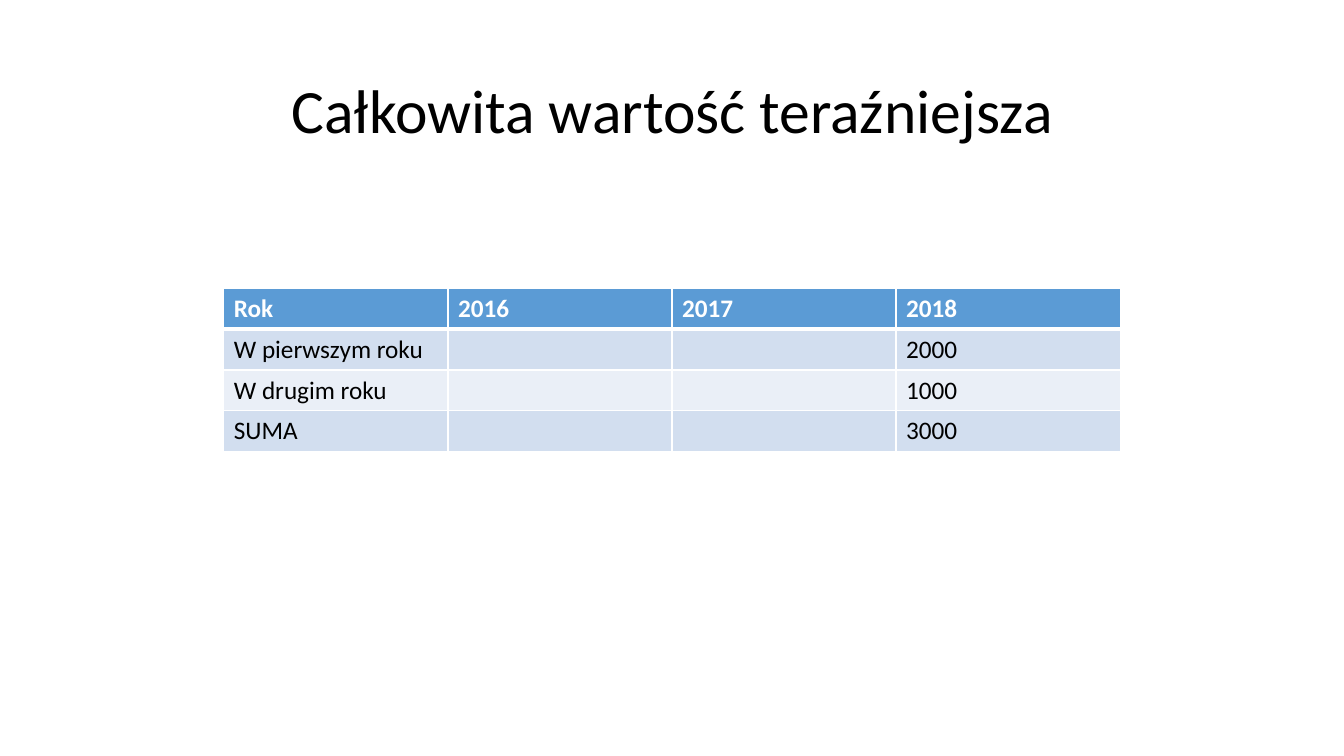
from lxml.etree import SubElement
from pptx import Presentation
from pptx.dml.color import RGBColor
from pptx.enum.text import MSO_ANCHOR, MSO_AUTO_SIZE, PP_ALIGN
from pptx.oxml.ns import qn
from pptx.util import Inches, Pt


def color(value):
    return RGBColor.from_string(value)


def write(tf, text, size=18, fill="000000", bold=False, font="Calibri",
          align=PP_ALIGN.LEFT, spacing=1.0):
    p = tf.paragraphs[0]
    p.alignment = align
    p.line_spacing = spacing
    p.font.size = Pt(size)
    if text:
        r = p.add_run()
        r.text = text
        r.font.name = font
        r.font.size = Pt(size)
        r.font.bold = bold
        r.font.color.rgb = color(fill)


class Deck:
    header = "5B9BD5"
    bands = ("D2DEEF", "EAEFF7")
    white = "FFFFFF"

    def __init__(self, width, height):
        self.prs = Presentation()
        self.prs.slide_width = Inches(width)
        self.prs.slide_height = Inches(height)
        self.s = self.prs.slides.add_slide(self.prs.slide_layouts[5])
        self.s.background.fill.solid()
        self.s.background.fill.fore_color.rgb = color(self.white)

    def title(self, text, left, top, width, height):
        sp = self.s.shapes.title
        sp.left, sp.top = Inches(left), Inches(top)
        sp.width, sp.height = Inches(width), Inches(height)
        tf = sp.text_frame
        tf.word_wrap = True
        tf.auto_size = MSO_AUTO_SIZE.NONE
        tf.vertical_anchor = MSO_ANCHOR.MIDDLE
        write(tf, text, size=44, align=PP_ALIGN.CENTER, spacing=0.9)

    def border(self, cell, side, width):
        ln = SubElement(cell._tc.get_or_add_tcPr(), qn(f"a:ln{side}"), w=str(Pt(width)))
        fill = SubElement(ln, qn("a:solidFill"))
        SubElement(fill, qn("a:srgbClr"), val=self.white)

    def table(self, rows, left, top, width, height):
        frame = self.s.shapes.add_table(len(rows), len(rows[0]), Inches(left),
                                        Inches(top), Inches(width), Inches(height))
        for i, row in enumerate(rows):
            head = i == 0
            widths = {"L": 1, "R": 1, "T": 3 if i == 1 else 1, "B": 3 if head else 1}
            for j, text in enumerate(row):
                cell = frame.table.cell(i, j)
                for side, weight in widths.items():
                    self.border(cell, side, weight)
                cell.fill.solid()
                cell.fill.fore_color.rgb = color(
                    self.header if head else self.bands[(i - 1) % 2])
                write(cell.text_frame, text, bold=head,
                      fill=self.white if head else "000000")


def main():
    deck = Deck(13.33, 7.5)
    deck.title("Całkowita wartość teraźniejsza", 0.92, 0.4, 11.5, 1.45)
    deck.table([
        ("Rok", "2016", "2017", "2018"),
        ("W pierwszym roku", "", "", "2000"),
        ("W drugim roku", "", "", "1000"),
        ("SUMA", "", "", "3000"),
    ], 2.22, 2.86, 8.89, 1.62)
    deck.prs.save("out.pptx")


if __name__ == "__main__":
    main()
